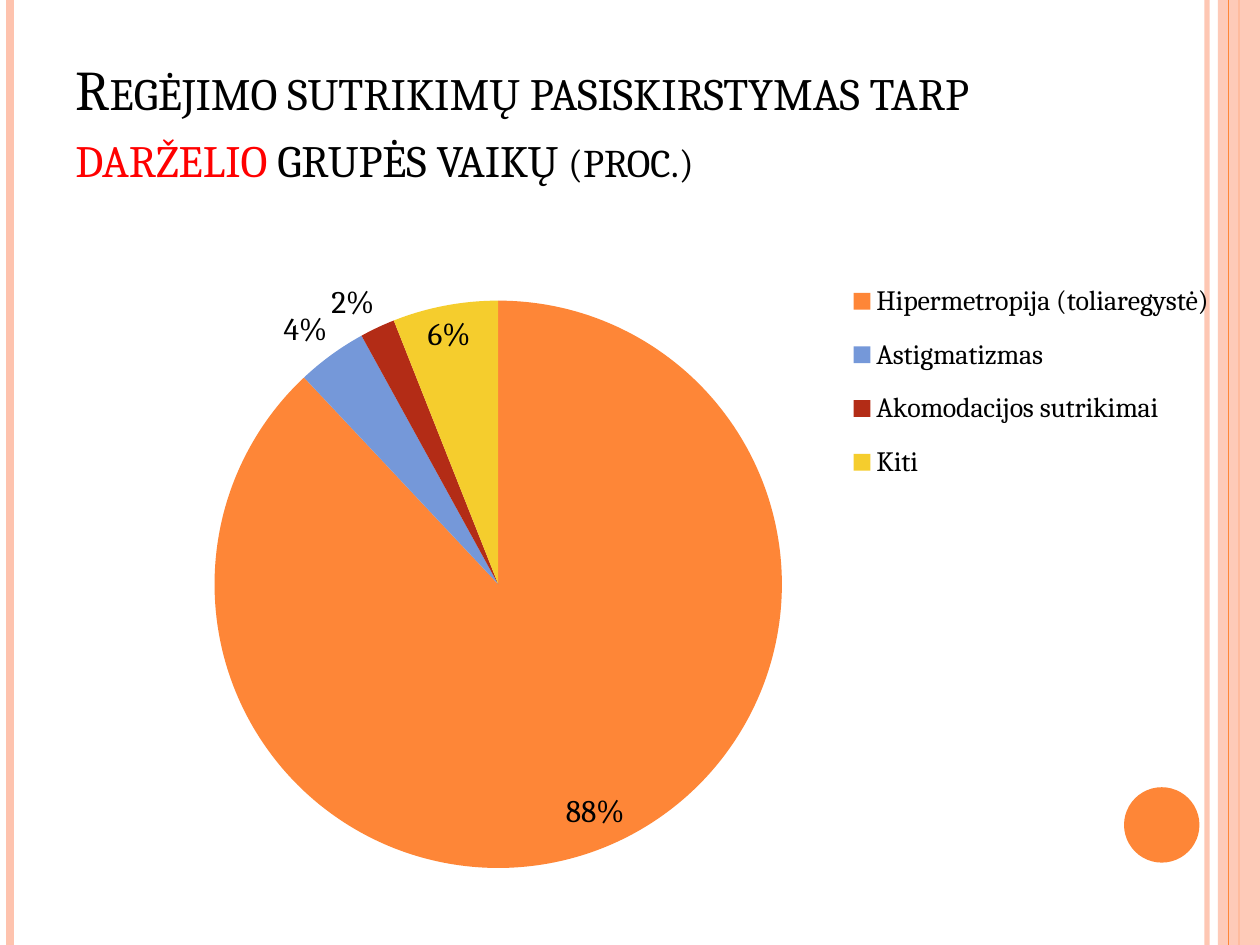
from lxml.etree import SubElement
from pptx import Presentation
from pptx.chart.data import CategoryChartData
from pptx.dml.color import RGBColor
from pptx.enum.chart import XL_CHART_TYPE, XL_LABEL_POSITION, XL_LEGEND_POSITION
from pptx.enum.shapes import MSO_CONNECTOR, MSO_SHAPE
from pptx.enum.text import MSO_ANCHOR, PP_ALIGN
from pptx.oxml import parse_xml
from pptx.oxml.ns import nsdecls, qn
from pptx.util import Cm, Pt

FONT = "Cambria"
ORANGE, PEACH, BLACK, RED = "FE8637", "FEC3AE", "000000", "FF0000"
TITLE = [
    ("Regėjimo sutrikimų pasiskirstymas tarp ", 32, BLACK),
    ("darželio ", 32, RED),
    ("grupės vaikų ", 32, BLACK),
    ("(proc.)", 28, BLACK),
]
DISORDERS = [
    ("Hipermetropija (toliaregystė)", 0.88, ORANGE),
    ("Astigmatizmas", 0.04, "7598D9"),
    ("Akomodacijos sutrikimai", 0.02, "B32C16"),
    ("Kiti", 0.06, "F5CD2D"),
]


def rgb(value):
    return RGBColor.from_string(value)


def set_format(obj, values):
    for name, value in values.items():
        setattr(obj, name, value)


def set_alpha(fill_parent, percent):
    color = next(fill_parent.iter(qn("a:srgbClr")))
    SubElement(color, qn("a:alpha")).set("val", str(percent * 1000))


def add_rule(s, x, height, color, width):
    line = s.shapes.add_connector(MSO_CONNECTOR.STRAIGHT, Cm(x), 0, Cm(x), Cm(height))
    line.line.color.rgb = rgb(color)
    line.line.width = Pt(width)
    SubElement(line._element.spPr, qn("a:effectLst"))
    return line


def add_solid(s, kind, left, top, width, height, color):
    sp = s.shapes.add_shape(kind, Cm(left), Cm(top), Cm(width), Cm(height))
    sp.shadow.inherit = False
    sp.fill.solid()
    sp.fill.fore_color.rgb = rgb(color)
    sp.line.fill.background()
    return sp


def add_frame(s, width, height):
    """Vertical rules at both edges, the right band and the corner dot."""
    inner = add_rule(s, width - 1.07, height, PEACH, 3)
    set_alpha(inner._element.spPr, 93)
    add_rule(s, 0.2, height, PEACH, 4.5)
    band_width = 0.85
    center = add_rule(s, width - band_width / 2, height, ORANGE, 1.5)
    band = add_solid(s, MSO_SHAPE.RECTANGLE, width - band_width, 0,
                     band_width, height, PEACH)
    set_alpha(band._element.spPr, 87)
    center.begin_connect(band, 0)
    center.end_connect(band, 2)
    add_rule(s, width - 0.64, height, ORANGE, 0.75)
    add_solid(s, MSO_SHAPE.OVAL, width - 2.74, height - 3.18, 1.52, 1.52, ORANGE)


def add_title(s, left, top, width, height):
    tf = s.shapes.add_textbox(Cm(left), Cm(top), Cm(width), Cm(height)).text_frame
    set_format(tf, {"word_wrap": True, "vertical_anchor": MSO_ANCHOR.BOTTOM})
    p = tf.paragraphs[0]
    p.alignment = PP_ALIGN.LEFT
    for text, size, color in TITLE:
        r = p.add_run()
        r.text = text
        set_format(r.font, {"name": FONT, "size": Pt(size)})
        r.font.color.rgb = rgb(color)
        r.font._element.set("cap", "small")


def set_layout(parent, index, x, y, w, h, inner=False):
    """Place a chart part by fractions of the chart area."""
    for old in parent.findall(qn("c:layout")):
        parent.remove(old)
    target = '<c:layoutTarget val="inner"/>' if inner else ""
    sizes = "".join(f'<c:{k} val="{v}"/>' for k, v in zip("xywh", (x, y, w, h)))
    parent.insert(index, parse_xml(
        f'<c:layout {nsdecls("c")}><c:manualLayout>{target}'
        f'<c:xMode val="edge"/><c:yMode val="edge"/>{sizes}'
        '</c:manualLayout></c:layout>'))


def add_pie(s, left, top, width, height):
    names, values, colors = zip(*DISORDERS)
    data = CategoryChartData(number_format="0%")
    data.categories = names
    data.add_series("Series 1", values)
    chart = s.shapes.add_chart(XL_CHART_TYPE.PIE, Cm(left), Cm(top),
                               Cm(width), Cm(height), data).chart
    set_format(chart, {"has_title": False, "has_legend": True})
    set_format(chart.font, {"name": FONT, "size": Pt(18)})
    chart.font.color.rgb = rgb(BLACK)

    legend = chart.legend
    set_format(legend, {"position": XL_LEGEND_POSITION.RIGHT,
                        "include_in_layout": False})
    set_format(legend.font, {"name": FONT, "size": Pt(16)})
    legend.font.color.rgb = rgb(BLACK)

    plot = chart.plots[0]
    set_format(plot, {"vary_by_categories": True, "has_data_labels": True})
    set_format(plot.data_labels, {
        "show_value": True, "show_percentage": False, "number_format": "0%",
        "number_format_is_linked": False, "position": XL_LABEL_POSITION.BEST_FIT})
    for i, color in enumerate(colors):
        fill = plot.series[0].points[i].format.fill
        fill.solid()
        fill.fore_color.rgb = rgb(color)

    plot_area = chart._chartSpace.chart.plotArea
    set_layout(plot_area, 0, 0.06, 0.09, 0.61, 0.91, inner=True)
    set_layout(legend._element, 1, 0.67, 0.03, 0.33, 0.38)


def main():
    prs = Presentation()
    width, height = 25.4, 19.05
    set_format(prs, {"slide_width": Cm(width), "slide_height": Cm(height)})
    s = prs.slides.add_slide(prs.slide_layouts[6])
    add_frame(s, width, height)
    add_title(s, 1.27, 0.76, 20.75, 3.18)
    add_pie(s, 1.7, 4.93, 22.86, 12.57)
    prs.save("out.pptx")


if __name__ == "__main__":
    main()
